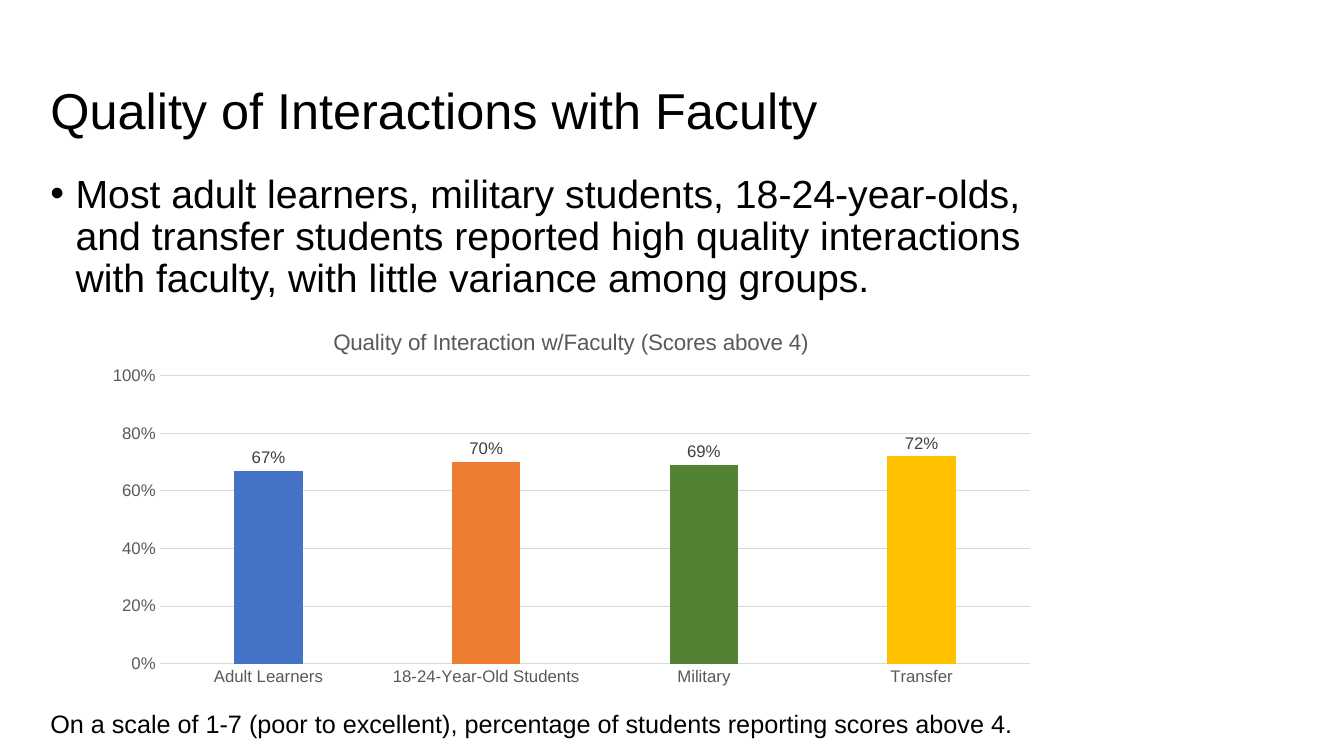
from lxml import etree
from pptx import Presentation
from pptx.chart.data import CategoryChartData
from pptx.dml.color import RGBColor
from pptx.enum.chart import XL_CHART_TYPE, XL_LABEL_POSITION, XL_TICK_MARK
from pptx.enum.text import MSO_ANCHOR, MSO_AUTO_SIZE, PP_ALIGN
from pptx.oxml.ns import qn
from pptx.util import Inches, Pt

COLUMNS = XL_CHART_TYPE.COLUMN_CLUSTERED
OUTSIDE_END = XL_LABEL_POSITION.OUTSIDE_END
NO_TICK = XL_TICK_MARK.NONE
TOP, MIDDLE = MSO_ANCHOR.TOP, MSO_ANCHOR.MIDDLE
NO_FIT = MSO_AUTO_SIZE.NONE
LEFT = PP_ALIGN.LEFT

WIDTH, HEIGHT = 13.33, 7.5
FONT = "Arial"
MARGIN = 0.4 / WIDTH
TEXT_WIDTH = 10.55 / WIDTH
BLACK, GREY, DARK_GREY, PALE = "000000", "595959", "404040", "D9D9D9"
GROUPS = {
    "Adult Learners": (0.67, "4472C4"),
    "18-24-Year-Old Students": (0.70, "ED7D31"),
    "Military": (0.69, "548235"),
    "Transfer": (0.72, "FFC000"),
}
PLOT_SHARES = {"x": 0.07, "y": 0.17, "w": 0.91, "h": 0.75}


def color(hex_value):
    return RGBColor.from_string(hex_value)


def area(left, top, width, height):
    return (Inches(left * WIDTH), Inches(top * HEIGHT),
            Inches(width * WIDTH), Inches(height * HEIGHT))


def style_font(font, size, hex_value):
    font.name, font.size, font.bold = FONT, Pt(size), False
    font.color.rgb = color(hex_value)


def write(box, place, text, size, anchor=TOP, spacing=1.0):
    box.left, box.top, box.width, box.height = place
    frame = box.text_frame
    frame.word_wrap = True
    frame.auto_size = NO_FIT
    frame.vertical_anchor = anchor
    paragraph = frame.paragraphs[0]
    paragraph.alignment = LEFT
    paragraph.line_spacing = spacing
    run = paragraph.add_run()
    run.text = text
    style_font(run.font, size, BLACK)
    return paragraph


def add_bullet(paragraph, indent):
    properties = paragraph._p.get_or_add_pPr()
    properties.set("marL", str(Inches(indent)))
    properties.set("indent", str(-Inches(indent)))
    etree.SubElement(properties, qn("a:buFont"), typeface=FONT)
    etree.SubElement(properties, qn("a:buChar"), char="•")


def style_line(line, hex_value):
    line.color.rgb = color(hex_value)
    line.width = Pt(0.75)


def style_axis(axis):
    axis.major_tick_mark = axis.minor_tick_mark = NO_TICK
    style_font(axis.tick_labels.font, 12, GREY)


def place_plot(chart):
    plot_area = chart._chartSpace.chart.plotArea
    layout = plot_area.find(qn("c:layout"))
    if layout is None:
        layout = etree.Element(qn("c:layout"))
        plot_area.insert(0, layout)
    manual = etree.SubElement(layout, qn("c:manualLayout"))
    etree.SubElement(manual, qn("c:layoutTarget"), val="inner")
    for side in "xy":
        etree.SubElement(manual, qn(f"c:{side}Mode"), val="edge")
    for side, share in PLOT_SHARES.items():
        etree.SubElement(manual, qn(f"c:{side}"), val=str(share))


def add_score_chart(slide, place):
    scores = CategoryChartData(number_format="0%")
    scores.categories = list(GROUPS)
    scores.add_series("Series 1", [score for score, _ in GROUPS.values()])
    chart = slide.shapes.add_chart(COLUMNS, *place, scores).chart
    style_font(chart.font, 12, BLACK)
    chart.has_legend = False
    chart.has_title = True
    heading = chart.chart_title.text_frame.paragraphs[0].add_run()
    heading.text = "Quality of Interaction w/Faculty (Scores above 4)"
    style_font(heading.font, 16, GREY)

    style_axis(chart.category_axis)
    style_line(chart.category_axis.format.line, PALE)
    percent_axis = chart.value_axis
    style_axis(percent_axis)
    percent_axis.format.line.fill.background()
    percent_axis.minimum_scale, percent_axis.maximum_scale = 0, 1
    percent_axis.major_unit = 0.2
    percent_axis.tick_labels.number_format = "0%"
    percent_axis.tick_labels.number_format_is_linked = False
    style_line(percent_axis.major_gridlines.format.line, PALE)

    plot = chart.plots[0]
    plot.gap_width, plot.overlap = 219, -27
    plot.vary_by_categories = False
    bars = plot.series[0]
    for index, (_, fill) in enumerate(GROUPS.values()):
        bar = bars.points[index].format.fill
        bar.solid()
        bar.fore_color.rgb = color(fill)
    labels = bars.data_labels
    labels.show_value = True
    labels.position = OUTSIDE_END
    labels.number_format = "0%"
    labels.number_format_is_linked = False
    style_font(labels.font, 12, DARK_GREY)
    place_plot(chart)


def main():
    deck = Presentation()
    deck.slide_width, deck.slide_height = Inches(WIDTH), Inches(HEIGHT)
    slide = deck.slides.add_slide(deck.slide_layouts[1])

    write(slide.shapes.title, area(MARGIN, 0.4 / HEIGHT, TEXT_WIDTH, 1.45 / HEIGHT),
          "Quality of Interactions with Faculty", 36, MIDDLE, 0.9)
    finding = write(
        slide.placeholders[1], area(MARGIN, 1.68 / HEIGHT, TEXT_WIDTH, 5.07 / HEIGHT),
        "Most adult learners, military students, 18-24-year-olds, and transfer "
        "students reported high quality interactions with faculty, with little "
        "variance among groups.", 28, spacing=0.9)
    finding.space_before = Pt(0)
    add_bullet(finding, 0.25)

    note_area = area(MARGIN, 6.98 / HEIGHT, 11.11 / WIDTH, 0.4 / HEIGHT)
    write(slide.shapes.add_textbox(*note_area), note_area,
          "On a scale of 1-7 (poor to excellent), percentage of students "
          "reporting scores above 4.", 18)
    add_score_chart(slide, area(0.92 / WIDTH, 3.08 / HEIGHT, 9.49 / WIDTH, 3.81 / HEIGHT))
    deck.save("out.pptx")


if __name__ == "__main__":
    main()
